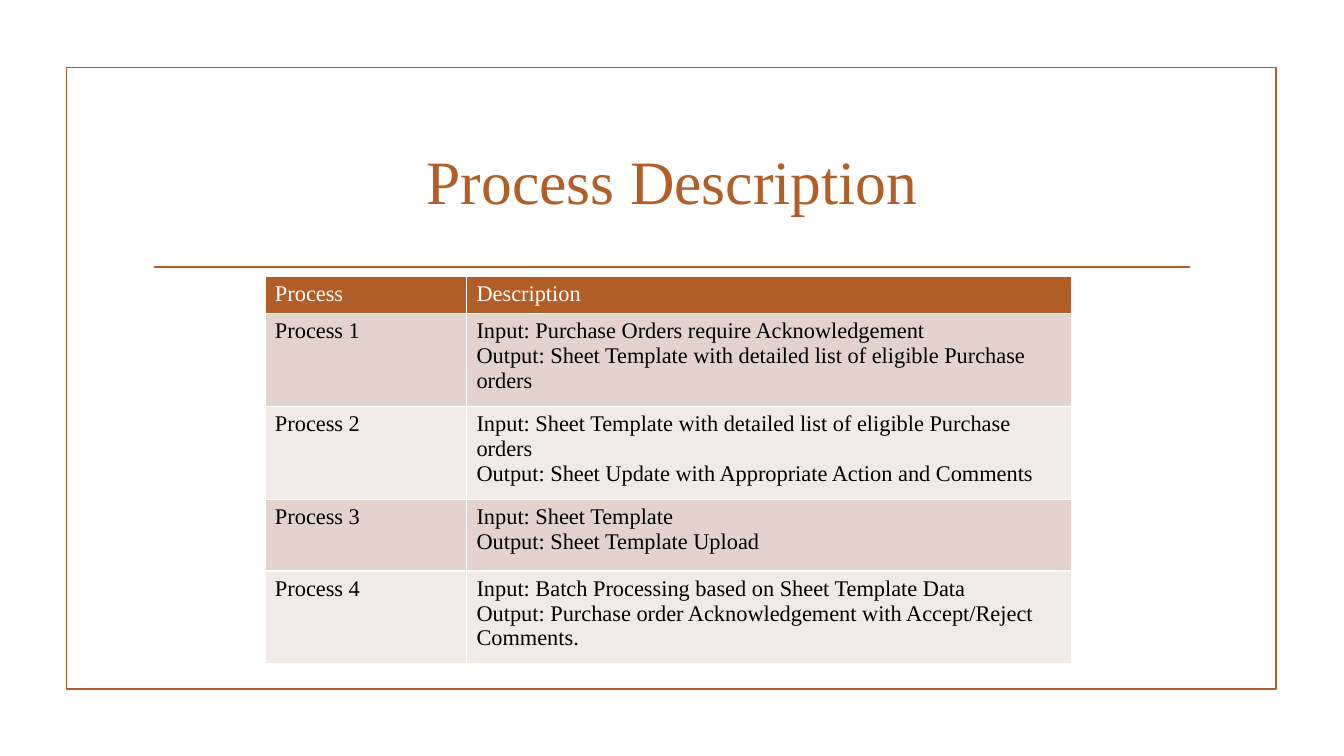
from lxml import etree
from pptx import Presentation
from pptx.dml.color import RGBColor
from pptx.enum.shapes import MSO_CONNECTOR as CONN, MSO_SHAPE as SHAPE
from pptx.enum.text import MSO_ANCHOR as ANCHOR, PP_ALIGN as ALIGN
from pptx.oxml import parse_xml
from pptx.oxml.ns import nsdecls, qn
from pptx.util import Cm, Pt

ACCENT, WHITE, BLACK = "B15E28", "FFFFFF", "000000"
BANDS = ["E4D2CD", "F2EAE8"]


def rgb(color):
    return RGBColor.from_string(color)


def add_run(p, text, size, color):
    r = p.add_run()
    r.text = text
    r.font.name = "Times New Roman"
    r.font.size = Pt(size)
    r.font.color.rgb = rgb(color)


prs = Presentation()
prs.slide_width, prs.slide_height = Cm(33.87), Cm(19.05)
s = prs.slides.add_slide(prs.slide_layouts[6])

# Frame
frame = s.shapes.add_shape(SHAPE.RECTANGLE, Cm(1.68), Cm(1.7), Cm(30.48), Cm(15.67))
frame.shadow.inherit = False
frame.fill.background()
frame.line.color.rgb = rgb(ACCENT)
frame.line.width = Pt(1.25)

# Rule under the title
rule = s.shapes.add_connector(CONN.STRAIGHT, Cm(3.89), Cm(6.73), Cm(30), Cm(6.73))
rule.line.color.rgb = rgb(ACCENT)
rule.line.width = Pt(1.25)
etree.SubElement(rule._element.spPr, qn("a:effectLst"))

# Title
tf = s.shapes.add_textbox(Cm(3.61), Cm(2.72), Cm(26.67), Cm(3.63)).text_frame
tf.word_wrap = True
tf.vertical_anchor = ANCHOR.MIDDLE
p = tf.paragraphs[0]
p.alignment = ALIGN.CENTER
add_run(p, "Process Description", 44, ACCENT)

# Process table
rows = [
    ("Process", ["Description"]),
    ("Process 1", ["Input: Purchase Orders require Acknowledgement",
                   "Output: Sheet Template with detailed list of eligible Purchase orders"]),
    ("Process 2", ["Input: Sheet Template with detailed list of eligible Purchase orders",
                   "Output: Sheet Update with Appropriate Action and Comments"]),
    ("Process 3", ["Input: Sheet Template",
                   "Output: Sheet Template Upload"]),
    ("Process 4", ["Input: Batch Processing based on Sheet Template Data",
                   "Output: Purchase order Acknowledgement with Accept/Reject Comments."]),
]
heights = [0.91, 2.34, 2.34, 1.81, 2.34]
table = s.shapes.add_table(len(rows), 2, Cm(6.68), Cm(6.96),
                           Cm(20.32), Cm(sum(heights))).table
table.columns[0].width, table.columns[1].width = Cm(5.08), Cm(15.24)

for i, (name, description) in enumerate(rows):
    table.rows[i].height = Cm(heights[i])
    for j, lines in enumerate([[name], description]):
        cell = table.cell(i, j)
        cell.margin_left = cell.margin_right = Cm(0.25)
        cell.margin_top = cell.margin_bottom = Cm(0.13)
        cell.fill.solid()
        cell.fill.fore_color.rgb = rgb(BANDS[(i - 1) % 2] if i else ACCENT)
        # Borders go before the fill
        for k, side in enumerate("LRTB"):
            cell._tc.tcPr.insert(k, parse_xml(
                f'<a:ln{side} {nsdecls("a")} w="{Pt(1)}"><a:solidFill>'
                f'<a:srgbClr val="{WHITE}"/></a:solidFill></a:ln{side}>'))
        tf = cell.text_frame
        for n, line in enumerate(lines):
            p = tf.add_paragraph() if n else tf.paragraphs[0]
            add_run(p, line, 16, BLACK if i else WHITE)
            p.runs[0].font.bold = False

prs.save("out.pptx")
